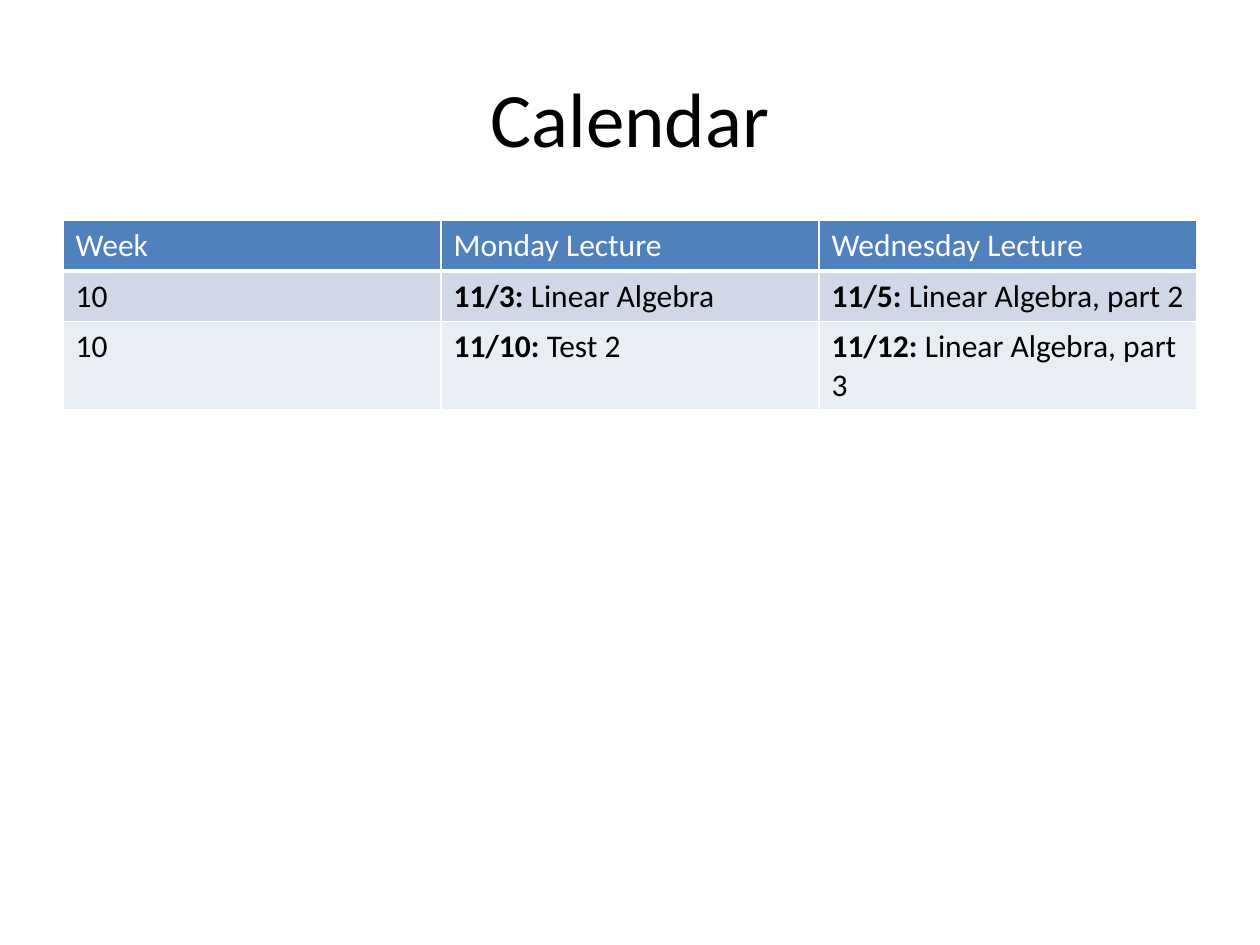
import pptx
import pptx.dml.color
import pptx.enum.text
import pptx.oxml
import pptx.oxml.ns
import pptx.util

Inches = pptx.util.Inches
Pt = pptx.util.Pt


def rgb(value):
    return pptx.dml.color.RGBColor.from_string(value)


class CalendarSlide:
    font = "Calibri"
    text = "000000"
    light = "FFFFFF"
    header = "4F81BD"
    bands = ("D0D8E8", "E9EDF4")

    def __init__(self, prs):
        self.s = prs.slides.add_slide(prs.slide_layouts[6])

    def style(self, r, size, color, bold=False):
        r.font.name = self.font
        r.font.size = Pt(size)
        r.font.bold = bold
        r.font.color.rgb = rgb(color)

    def title(self, text, x, y, w, h):
        sp = self.s.shapes.add_textbox(Inches(x), Inches(y), Inches(w), Inches(h))
        tf = sp.text_frame
        tf.word_wrap = True
        tf.vertical_anchor = pptx.enum.text.MSO_ANCHOR.MIDDLE
        tf.text = text
        p = tf.paragraphs[0]
        p.alignment = pptx.enum.text.PP_ALIGN.CENTER
        self.style(p.runs[0], 44, self.text)

    def borders(self, cell, bottom):
        tcPr = cell._tc.get_or_add_tcPr()
        widths = {"lnL": 1, "lnR": 1, "lnT": 1, "lnB": bottom}
        for i, (tag, width) in enumerate(widths.items()):
            ln = pptx.oxml.parse_xml(
                f'<a:{tag} {pptx.oxml.ns.nsdecls("a")} w="{Pt(width)}"><a:solidFill>'
                f'<a:srgbClr val="{self.light}"/></a:solidFill></a:{tag}>')
            tcPr.insert(i, ln)

    def cell(self, cell, parts, fill, color, bottom):
        cell.fill.solid()
        cell.fill.fore_color.rgb = rgb(fill)
        self.borders(cell, bottom)
        p = cell.text_frame.paragraphs[0]
        for i, part in enumerate(parts):
            r = p.add_run()
            r.text = part
            self.style(r, 18, color, bold=i < len(parts) - 1)

    def table(self, rows, x, y, w, heights):
        frame = self.s.shapes.add_table(len(rows), len(rows[0]), Inches(x), Inches(y),
                                        Inches(w), Inches(sum(heights)))
        table = frame.table
        for i, row in enumerate(rows):
            table.rows[i].height = Inches(heights[i])
            fill = self.bands[(i - 1) % 2] if i else self.header
            color = self.text if i else self.light
            for j, parts in enumerate(row):
                self.cell(table.cell(i, j), parts, fill, color, 1 if i else 3)


def main():
    prs = pptx.Presentation()
    prs.slide_width = Inches(10)
    prs.slide_height = Inches(7.5)
    slide = CalendarSlide(prs)
    slide.title("Calendar", 0.5, 0.3, 9, 1.25)
    slide.table([
        [["Week"], ["Monday Lecture"], ["Wednesday Lecture"]],
        [["10"], ["11/3: ", "Linear Algebra"], ["11/5: ", "Linear Algebra, part 2"]],
        [["10"], ["11/10: ", "Test 2"], ["11/12: ", "Linear Algebra, part 3"]],
    ], 0.5, 1.75, 9, [0.4, 0.4, 0.7])
    prs.save("out.pptx")


if __name__ == "__main__":
    main()
